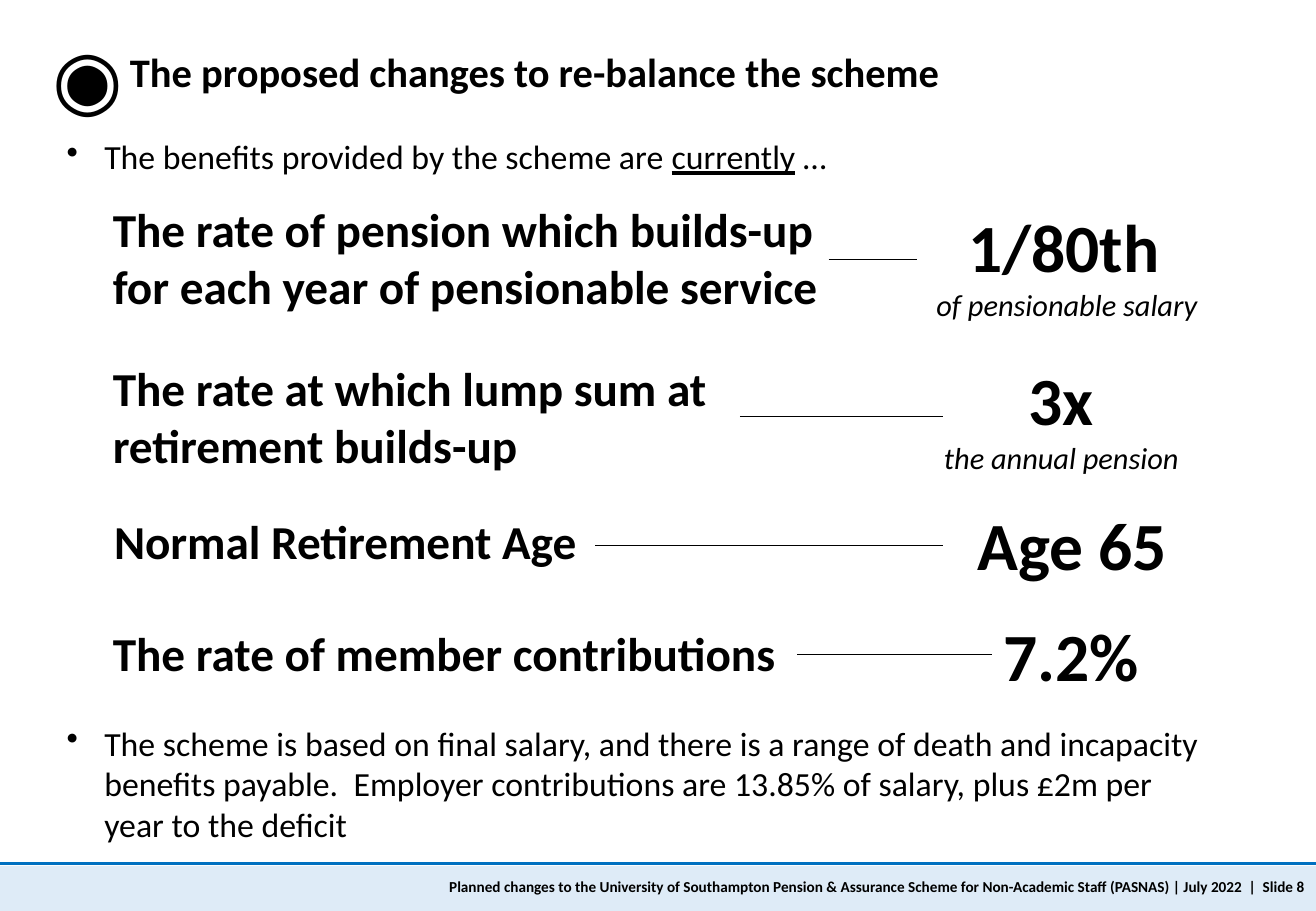
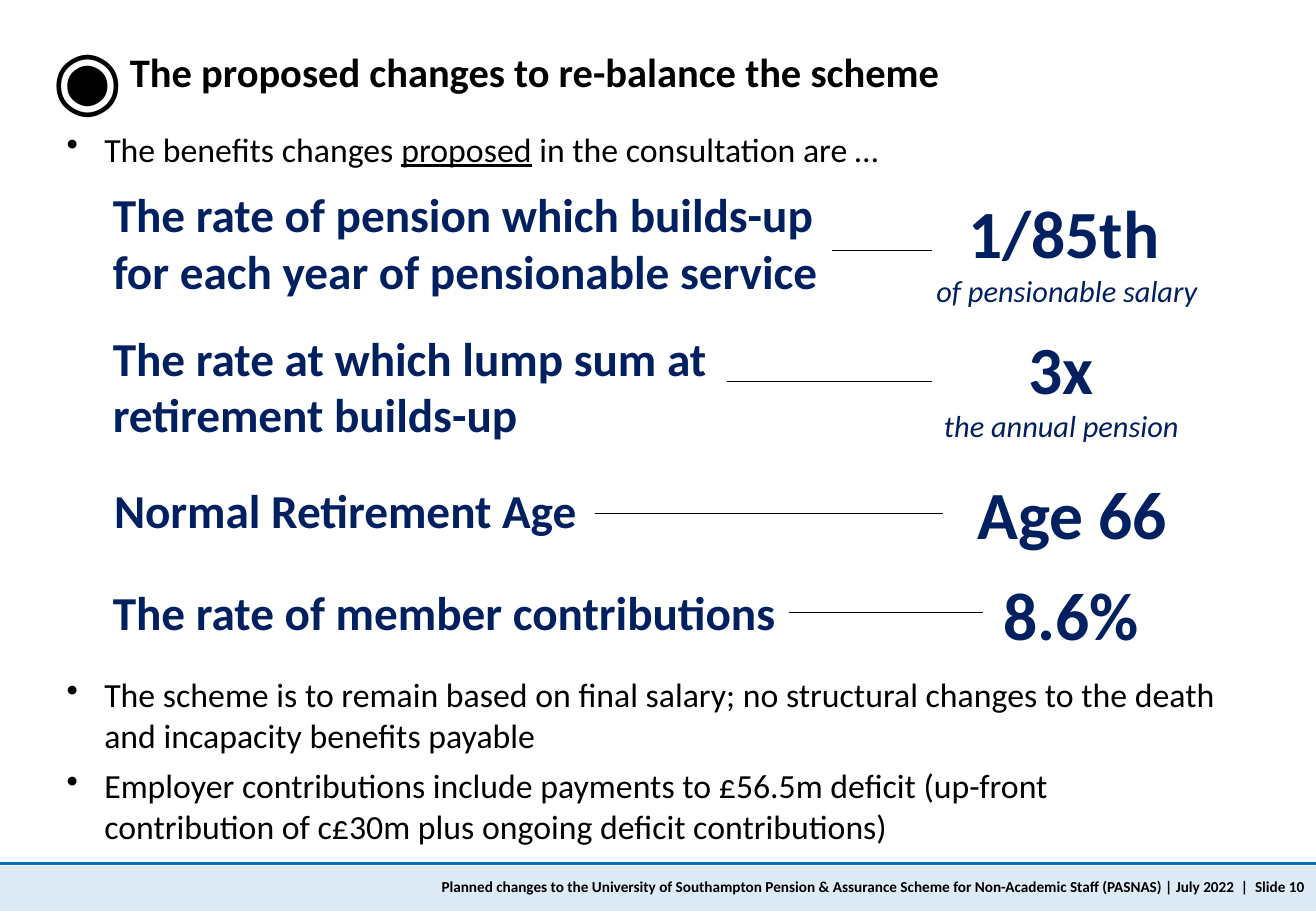
import pptx
import pptx.util
import pptx.dml.color
import pptx.enum.shapes
import pptx.enum.text
import lxml.etree

Inches = pptx.util.Inches
Pt = pptx.util.Pt
ALIGN = pptx.enum.text.PP_ALIGN
BLACK, NAVY, BLUE, PALE = "000000", "002060", "0070C0", "DEEBF7"
WIDE, HIGH = 10.83, 7.5


def color(code):
    return pptx.dml.color.RGBColor.from_string(code)


class Deck:
    font = "Calibri"
    title = "The proposed changes to re-balance the scheme"
    footer = ("Planned changes to the University of Southampton Pension & Assurance "
              "Scheme for Non-Academic Staff (PASNAS) | July 2022  |  Slide ")

    def __init__(self):
        self.file = pptx.Presentation()
        self.file.slide_width = Inches(WIDE)
        self.file.slide_height = Inches(HIGH)
        self.slide = None

    def start(self, number):
        self.slide = self.file.slides.add_slide(self.file.slide_layouts[6])
        self.band(7.13)
        foot = self.box(1.2, 7.19, 9.63, 0.22, middle=True)
        self.para(foot, [self.footer + str(number)], 9, bold=True, align=ALIGN.RIGHT)
        self.line(0, WIDE, 7.11, BLUE, 2.25)
        head = self.box(0.97, 0.34, 7.86, 0.5)
        self.para(head, [self.title], 24, bold=True)
        icon = self.box(0.33, 0.39, 0.5, 0.45, middle=True)
        self.para(icon, ["◉"], 48, align=ALIGN.CENTER)

    def band(self, top):
        shape = self.slide.shapes.add_shape(
            pptx.enum.shapes.MSO_SHAPE.RECTANGLE,
            0, Inches(top), Inches(WIDE), Inches(HIGH - top))
        shape.shadow.inherit = False
        shape.fill.solid()
        shape.fill.fore_color.rgb = color(PALE)
        shape.line.fill.background()

    def line(self, left, right, y, ink=BLACK, weight=0.5):
        rule = self.slide.shapes.add_connector(
            pptx.enum.shapes.MSO_CONNECTOR.STRAIGHT,
            Inches(left), Inches(y), Inches(right), Inches(y))
        rule.line.color.rgb = color(ink)
        rule.line.width = Pt(weight)
        lxml.etree.SubElement(rule._element.spPr, pptx.oxml.ns.qn("a:effectLst"))

    def box(self, left, top, width, height, middle=False):
        shape = self.slide.shapes.add_textbox(
            Inches(left), Inches(top), Inches(width), Inches(height))
        frame = shape.text_frame
        frame.word_wrap = True
        if middle:
            frame.vertical_anchor = pptx.enum.text.MSO_ANCHOR.MIDDLE
        else:
            frame.auto_size = pptx.enum.text.MSO_AUTO_SIZE.SHAPE_TO_FIT_TEXT
        return frame

    def para(self, frame, runs, size, ink=BLACK, bold=False, italic=False,
             align=ALIGN.LEFT, under=None):
        first = frame.paragraphs[0]
        para = frame.add_paragraph() if first.runs else first
        para.alignment = align
        for text in runs:
            run = para.add_run()
            run.text = text
            run.font.name = self.font
            run.font.size = Pt(size)
            run.font.color.rgb = color(ink)
            run.font.bold = bold
            run.font.italic = italic
            run.font.underline = text == under
        return para

    def points(self, top, width, height, items, under=None):
        frame = self.box(0.45, top, width, height)
        for order, runs in enumerate(items):
            para = self.para(frame, runs, 20, under=under)
            props = para._p.get_or_add_pPr()
            props.set("marL", str(Inches(0.31)))
            props.set("indent", str(-Inches(0.31)))
            mark = lxml.etree.SubElement(props, pptx.oxml.ns.qn("a:buChar"))
            mark.set("char", "•")
            para.space_after = Pt(3)
            if order:
                para.space_before = Pt(3)

    def label(self, left, top, height, text, ink):
        frame = self.box(left, top, 6.47, height)
        self.para(frame, [text], 28, ink, bold=True)

    def value(self, left, top, width, text, ink, note=None):
        frame = self.box(left, top, width, 1.11 if note else 0.77)
        self.para(frame, [text], 40, ink, bold=True, align=ALIGN.CENTER)
        if note:
            self.note(frame, note, ink)

    def note(self, frame, text, ink):
        self.para(frame, [text], 18, ink, italic=True, align=ALIGN.CENTER)

    def rates(self, ink, rows):
        for term, (text, top, high, left, right, y) in zip(TERMS, rows):
            name, edge, height, start, width, note = term
            self.label(edge, top, height, name, ink)
            self.value(start, high, width, text, ink, note)
            self.line(left, right, y)
        below = self.box(7.47, rows[0][2] + 0.67, 2.62, 0.4)
        self.note(below, "of pensionable salary", ink)


TERMS = [
    ("The rate of pension which builds-up for each year of pensionable service",
     0.83, 1.04, 7.76, 1.99, None),
    ("The rate at which lump sum at retirement builds-up",
     0.83, 1.04, 7.47, 2.53, "the annual pension"),
    ("Normal Retirement Age", 0.84, 0.57, 7.56, 2.53, None),
    ("The rate of member contributions", 0.83, 0.57, 7.55, 2.53, None),
]


def main():
    deck = Deck()

    deck.start(8)
    deck.points(1.07, 9.98, 0.44, [
        ["The benefits provided by the scheme are ", "currently", " …"],
    ], under="currently")
    deck.rates(BLACK, [
        ("1/80th", 1.6, 1.64, 6.82, 7.55, 2.14),
        ("3x", 2.91, 2.9, 6.09, 7.76, 3.43),
        ("Age 65", 4.17, 4.09, 4.9, 7.76, 4.49),
        ("7.2%", 5.09, 5.01, 6.56, 8.16, 5.39),
    ])
    deck.points(5.9, 9.55, 1.11, [
        ["The scheme is based on final salary, and there is a range of death and "
         "incapacity benefits payable.  Employer contributions are 13.85% of salary, "
         "plus £2m per year to the deficit"],
    ])

    deck.start(10)
    deck.points(1.01, 9.98, 0.44, [
        ["The benefits changes ", "proposed", " in the consultation are …"],
    ], under="proposed")
    deck.rates(NAVY, [
        ("1/85th", 1.48, 1.52, 6.85, 7.67, 2.06),
        ("3x", 2.66, 2.64, 5.98, 7.67, 3.14),
        ("Age 66", 3.91, 3.84, 4.9, 7.76, 4.23),
        ("8.6%", 4.75, 4.67, 6.49, 8.09, 5.04),
    ])
    deck.points(5.5, 9.71, 1.53, [
        ["The scheme is to remain based on final salary; no structural changes to "
         "the death and incapacity benefits payable"],
        ["Employer contributions include payments to £56.5m deficit (up-front "
         "contribution of c£30m plus ongoing deficit contributions)"],
    ])

    deck.file.save("out.pptx")


if __name__ == "__main__":
    main()
